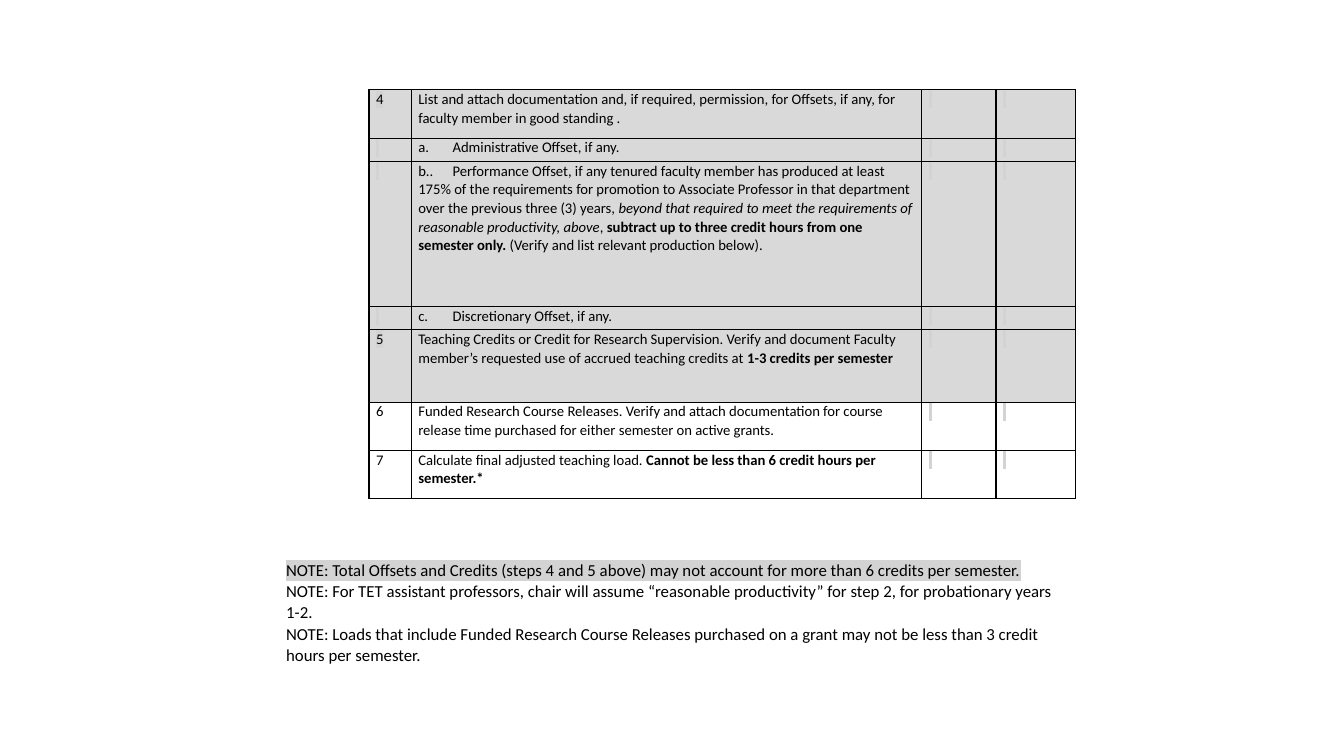
from dataclasses import dataclass

from lxml import etree
from pptx import Presentation
from pptx import util as u
from pptx.dml.color import RGBColor
from pptx.oxml import ns

EMU_PER_PX = 9144  # 100 px to the inch


@dataclass(frozen=True)
class Theme:
    font: str = "Calibri"
    table_size: float = 10.5
    note_size: float = 12
    ink: str = "000000"
    shade: str = "D9D9D9"
    highlight: str = "D3D3D3"
    border: float = 1


THEME = Theme()
COLUMNS = [42, 506, 74, 79]
ROW_HEIGHTS = [48, 23, 144, 23, 72, 48, 48]
SHADED_ROWS = 5
OFFSET_TAB = 34

# Run styles: b bold, i italic, h highlighted
STEPS = [
    ("4", [("List and attach documentation and, if required, permission, for Offsets, "
            "if any, for faculty member in good standing .", "")]),
    ("", [("a.\tAdministrative Offset, if any.", "")]),
    ("", [("b..\tPerformance Offset, if any tenured faculty member has produced at least "
           "175% of the requirements for promotion to Associate Professor in that "
           "department over the previous three (3) years, ", ""),
          ("beyond that required to meet the requirements of reasonable productivity, above", "i"),
          (", ", ""),
          ("subtract up to three credit hours from one semester only.", "b"),
          (" (Verify and list relevant production below).", "")]),
    ("", [("c.\tDiscretionary Offset, if any.", "")]),
    ("5", [("Teaching Credits or Credit for Research Supervision. Verify and document Faculty "
            "member’s requested use of accrued teaching credits at ", ""),
           ("1-3 credits per semester", "b")]),
    ("6", [("Funded Research Course Releases. Verify and attach documentation for course "
            "release time purchased for either semester on active grants.", "")]),
    ("7", [("Calculate final adjusted teaching load. ", ""),
           ("Cannot be less than 6 credit hours per semester.*", "b")]),
]
NOTES = [
    [("NOTE: Total Offsets and Credits (steps 4 and 5 above) may not account for more than "
      "6 credits per semester.", "h")],
    [("NOTE: For TET assistant professors, chair will assume “reasonable productivity” "
      "for step 2, for probationary years 1-2.", "")],
    [("NOTE: Loads that include Funded Research Course Releases purchased on a grant may "
      "not be less than 3 credit hours per semester.", "")],
]


def px(length):
    return u.Emu(length * EMU_PER_PX)


def add_element(parent, tag, **attributes):
    return etree.SubElement(parent, ns.qn(tag), attributes)


def write_paragraph(paragraph, pieces, size):
    if any("\t" in words for words, _ in pieces):
        tabs = add_element(paragraph._p.get_or_add_pPr(), "a:tabLst")
        add_element(tabs, "a:tab", pos=str(px(OFFSET_TAB)), algn="l")
    paragraph.line_spacing = 1.05
    paragraph.font.name = THEME.font
    paragraph.font.size = u.Pt(size)
    paragraph.font.color.rgb = RGBColor.from_string(THEME.ink)
    for words, style in pieces:
        run = paragraph.add_run()
        run.text = words
        if style == "b":
            run.font.bold = True
        elif style == "i":
            run.font.italic = True
        elif style == "h":
            mark = add_element(run._r.get_or_add_rPr(), "a:highlight")
            add_element(mark, "a:srgbClr", val=THEME.highlight)


def format_cell(cell, shaded):
    cell.margin_left = cell.margin_right = px(7)
    cell.margin_top = cell.margin_bottom = 0
    properties = cell._tc.get_or_add_tcPr()
    for side in ("a:lnL", "a:lnR", "a:lnT", "a:lnB"):
        line = add_element(properties, side, w=str(u.Pt(THEME.border)))
        add_element(add_element(line, "a:solidFill"), "a:srgbClr", val=THEME.ink)
    if shaded:
        cell.fill.solid()
        cell.fill.fore_color.rgb = RGBColor.from_string(THEME.shade)
    else:
        cell.fill.background()


def add_step_table(slide):
    frame = slide.shapes.add_table(len(STEPS), len(COLUMNS), px(366), px(89),
                                   px(sum(COLUMNS)), px(sum(ROW_HEIGHTS)))
    table = frame.table
    table.first_row = table.horz_banding = False
    for column, width in zip(table.columns, COLUMNS):
        column.width = px(width)
    for index, (number, description) in enumerate(STEPS):
        table.rows[index].height = px(ROW_HEIGHTS[index])
        shaded = index < SHADED_ROWS
        blank = [(" ", "h")]  # shows as a thin highlighted entry mark
        label = [(number, "h" if shaded else "")] if number else blank
        for cell, pieces in zip(table.rows[index].cells, [label, description, blank, blank]):
            format_cell(cell, shaded)
            write_paragraph(cell.text_frame.paragraphs[0], pieces, THEME.table_size)


def add_notes(slide):
    frame = slide.shapes.add_textbox(px(274), px(549), px(794), px(115)).text_frame
    frame.word_wrap = True
    for index, pieces in enumerate(NOTES):
        paragraph = frame.add_paragraph() if index else frame.paragraphs[0]
        write_paragraph(paragraph, pieces, THEME.note_size)
        if index:
            paragraph.space_before = u.Pt(0.3)


def main():
    presentation = Presentation()
    presentation.slide_width, presentation.slide_height = px(1333), px(750)
    slide = presentation.slides.add_slide(presentation.slide_layouts[6])
    # Steps of the teaching load, then the notes below
    add_step_table(slide)
    add_notes(slide)
    presentation.save("out.pptx")


if __name__ == "__main__":
    main()
